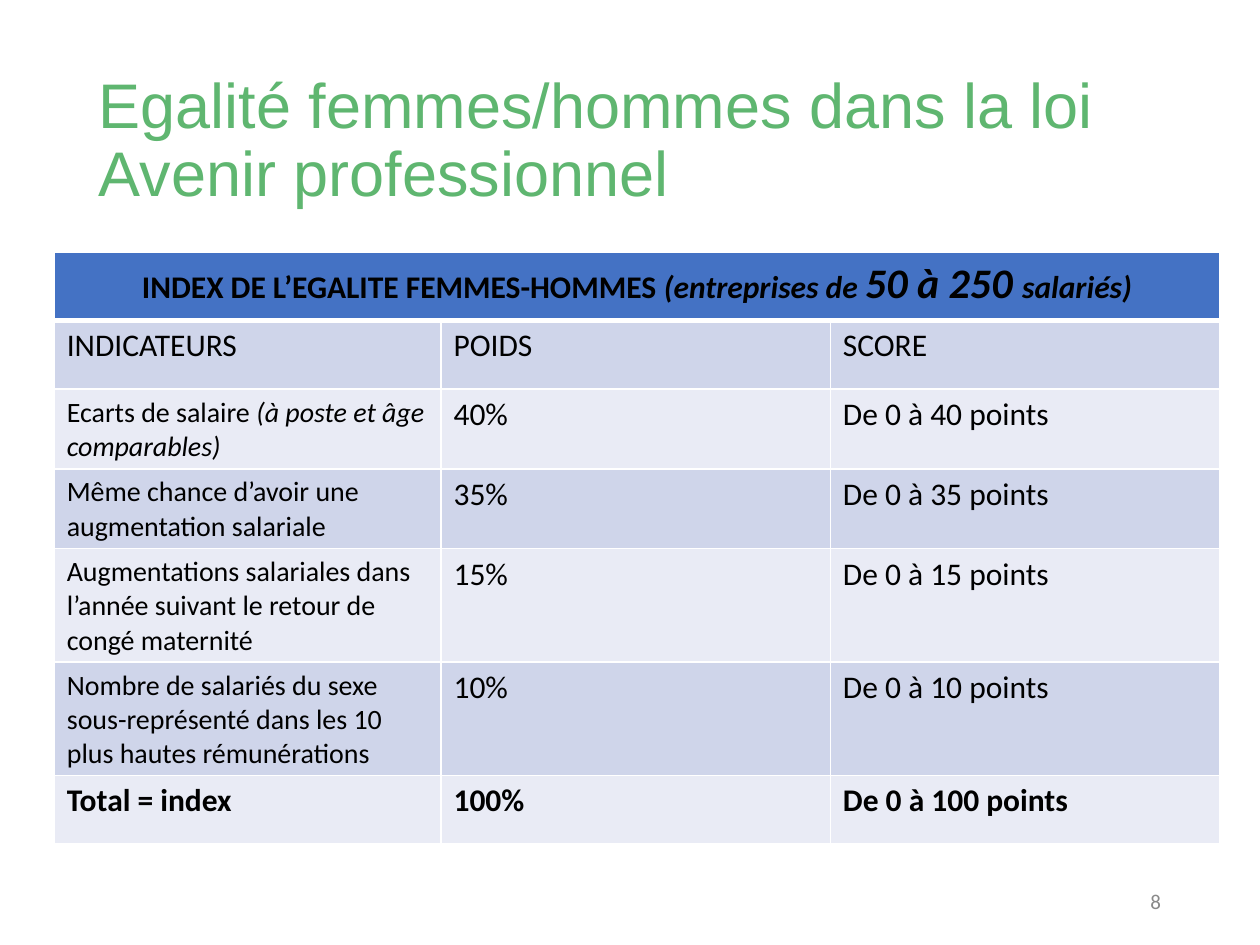
import pptx
import pptx.dml.color
import pptx.enum.text
import pptx.oxml.ns
import pptx.util
from lxml import etree

Pt = pptx.util.Pt
ALIGN = pptx.enum.text.PP_ALIGN
COLORS = {
    "title": "5FB670",
    "header": "4472C4",
    "odd": "CFD5EA",
    "even": "E9EBF5",
    "border": "FFFFFF",
    "text": "000000",
    "number": "898989",
}
COLUMN_WIDTHS = (221, 222.5, 222.5)
ROW_HEIGHT = 39.2
HEADER = [
    ("INDEX DE L’EGALITE FEMMES-HOMMES ", 18, True, False),
    ("(entreprises de ", 18, True, True),
    ("50 à 250 ", 24, True, True),
    ("salariés)", 18, True, True),
]
INDICATORS = [
    ([("Ecarts de salaire ", 16, False, False),
      ("(à poste et âge comparables)", 16, False, True)], 40),
    ([("Même chance d’avoir une augmentation salariale", 16, False, False)], 35),
    ([("Augmentations salariales dans l’année suivant le retour de congé maternité",
       16, False, False)], 15),
    ([("Nombre de salariés du sexe sous-représenté dans les 10 plus hautes rémunérations",
       16, False, False)], 10),
]


def rgb(name):
    return pptx.dml.color.RGBColor.from_string(COLORS[name])


def add_runs(paragraph, runs, color, font_name="Calibri"):
    """Add (text, size, bold, italic) runs to a paragraph."""
    for text, size, bold, italic in runs:
        run = paragraph.add_run()
        run.text = text
        run.font.name = font_name
        run.font.size = Pt(size)
        run.font.bold = bold
        run.font.italic = italic
        run.font.color.rgb = rgb(color)


def add_text(slide, box, runs, color, font_name, alignment, line_spacing=1.0):
    shape = slide.shapes.add_textbox(*(Pt(length) for length in box))
    frame = shape.text_frame
    frame.word_wrap = True
    frame.vertical_anchor = pptx.enum.text.MSO_ANCHOR.MIDDLE
    paragraph = frame.paragraphs[0]
    paragraph.alignment = alignment
    paragraph.line_spacing = line_spacing
    add_runs(paragraph, runs, color, font_name)


def set_borders(cell, top, bottom):
    """Draw the four sides; the left and right ones are 1 point wide."""
    properties = cell._tc.get_or_add_tcPr()
    qn = pptx.oxml.ns.qn
    for side, width in (("L", 1), ("R", 1), ("T", top), ("B", bottom)):
        line = etree.SubElement(properties, qn(f"a:ln{side}"), w=str(Pt(width)))
        fill = etree.SubElement(line, qn("a:solidFill"))
        etree.SubElement(fill, qn("a:srgbClr"), val=COLORS["border"])


def table_rows():
    """Return the runs of each cell below the header row."""
    rows = [[[(label, 18, False, False)] for label in ("INDICATEURS", "POIDS", "SCORE")]]
    total = [("Total = index", 18, True, False)]
    for label, weight in INDICATORS + [(total, 100)]:
        bold = label is total
        rows.append([
            label,
            [(f"{weight}%", 18, bold, False)],
            [(f"De 0 à {weight} points", 18, bold, False)],
        ])
    return rows


def add_index_table(slide):
    rows = [[HEADER, [], []]] + table_rows()
    frame = slide.shapes.add_table(
        len(rows), len(COLUMN_WIDTHS), Pt(31), Pt(144),
        Pt(sum(COLUMN_WIDTHS)), Pt(ROW_HEIGHT * len(rows)))
    table = frame.table
    for column, width in zip(table.columns, COLUMN_WIDTHS):
        column.width = Pt(width)
    for index, cells in enumerate(rows):
        table.rows[index].height = Pt(ROW_HEIGHT)
        fill = "header" if index == 0 else "odd" if index % 2 else "even"
        for column, runs in enumerate(cells):
            cell = table.cell(index, column)
            set_borders(cell, 3 if index == 1 else 1, 3 if index == 0 else 1)
            cell.fill.solid()
            cell.fill.fore_color.rgb = rgb(fill)
            add_runs(cell.text_frame.paragraphs[0], runs, "text")
    table.cell(0, 0).merge(table.cell(0, len(COLUMN_WIDTHS) - 1))
    table.cell(0, 0).text_frame.paragraphs[0].alignment = ALIGN.CENTER


def main():
    presentation = pptx.Presentation()
    presentation.slide_width = Pt(720)
    presentation.slide_height = Pt(540)
    slide = presentation.slides.add_slide(presentation.slide_layouts[6])
    title = "Egalité femmes/hommes dans la loi Avenir professionnel"
    add_text(slide, (49.5, 28.75, 621, 104.4), [(title, 36, False, False)],
             "title", "Arial", ALIGN.LEFT, 0.9)
    add_index_table(slide)
    add_text(slide, (508.5, 500.5, 162, 28.75), [("8", 12, False, False)],
             "number", "Calibri", ALIGN.RIGHT)
    presentation.save("out.pptx")


if __name__ == "__main__":
    main()
